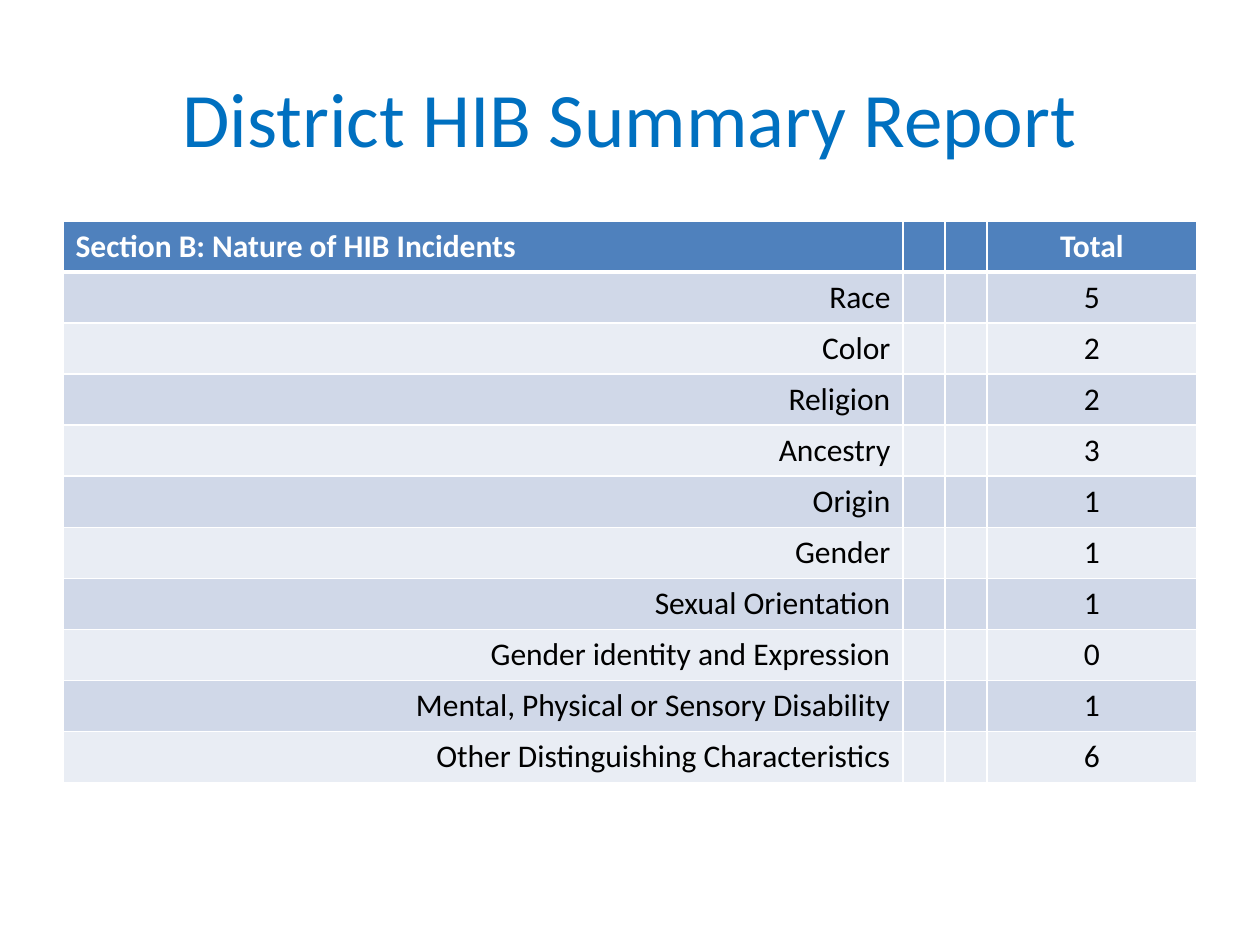
from dataclasses import dataclass

from lxml.etree import SubElement
from pptx import Presentation
from pptx.dml.color import RGBColor
from pptx.enum.text import MSO_ANCHOR, PP_ALIGN
from pptx.oxml.ns import qn
from pptx.util import Pt

PX_PER_INCH = 126


@dataclass(frozen=True)
class Theme:
    font: str = "Calibri"
    title_size: int = 44
    body_size: int = 18
    title: str = "0070C0"
    header: str = "4F81BD"
    header_text: str = "FFFFFF"
    bands: tuple = ("D0D8E8", "E9EDF4")
    text: str = "000000"
    border: str = "FFFFFF"
    border_width: int = 1
    header_rule: int = 3


THEME = Theme()
INCIDENTS = [
    ("Race", 5),
    ("Color", 2),
    ("Religion", 2),
    ("Ancestry", 3),
    ("Origin", 1),
    ("Gender", 1),
    ("Sexual Orientation", 1),
    ("Gender identity and Expression", 0),
    ("Mental, Physical or Sensory Disability", 1),
    ("Other Distinguishing Characteristics", 6),
]


def px(n):
    return round(n * 914400 / PX_PER_INCH)


def write(tf, text, align, color, **fmt):
    p = tf.paragraphs[0]
    p.alignment = align
    r = p.add_run()
    r.text = text
    r.font.color.rgb = RGBColor.from_string(color)
    for name, value in {"name": THEME.font, **fmt}.items():
        setattr(r.font, name, value)


def set_borders(cell, widths):
    """Draw cell borders; widths maps each side (L, R, T, B) to points."""
    tcPr = cell._tc.get_or_add_tcPr()
    for side, width in widths.items():
        ln = SubElement(tcPr, qn(f"a:ln{side}"), w=str(Pt(width)))
        fill = SubElement(ln, qn("a:solidFill"))
        SubElement(fill, qn("a:srgbClr"), val=THEME.border)


def add_title(s, box, text):
    tf = s.shapes.add_textbox(*map(px, box)).text_frame
    for name, value in {"word_wrap": True, "vertical_anchor": MSO_ANCHOR.MIDDLE}.items():
        setattr(tf, name, value)
    write(tf, text, PP_ALIGN.CENTER, THEME.title, size=Pt(THEME.title_size))


def add_incident_table(s, box, heading, incidents):
    x, y, w, h = box
    rows = [(heading, "", "", "Total")] + [(name, "", "", str(n)) for name, n in incidents]
    table = s.shapes.add_table(len(rows), 4, px(x), px(y), px(w), px(h)).table

    spacer, total = w // 27, w * 5 // 27
    for col, width in zip(table.columns, (w - 2 * spacer - total, spacer, spacer, total)):
        col.width = px(width)

    for i, values in enumerate(rows):
        header = i == 0
        fill = THEME.header if header else THEME.bands[(i - 1) % 2]
        color = THEME.header_text if header else THEME.text
        widths = dict.fromkeys("LRTB", THEME.border_width)
        if header:
            widths["B"] = THEME.header_rule
        elif i == 1:
            widths["T"] = THEME.header_rule
        label_align = PP_ALIGN.LEFT if header else PP_ALIGN.RIGHT
        for j, text in enumerate(values):
            cell = table.cell(i, j)
            set_borders(cell, widths)
            cell.fill.solid()
            cell.fill.fore_color.rgb = RGBColor.from_string(fill)
            if text:
                align = label_align if j == 0 else PP_ALIGN.CENTER
                write(cell.text_frame, text, align, color,
                      size=Pt(THEME.body_size), bold=header)


def main():
    prs = Presentation()
    prs.slide_width, prs.slide_height = px(1260), px(945)
    s = prs.slides.add_slide(prs.slide_layouts[6])
    add_title(s, (63, 38, 1134, 158), "District HIB Summary Report")
    add_incident_table(s, (63, 221, 1134, 562),
                       "Section B: Nature of HIB Incidents", INCIDENTS)
    prs.save("out.pptx")


if __name__ == "__main__":
    main()
